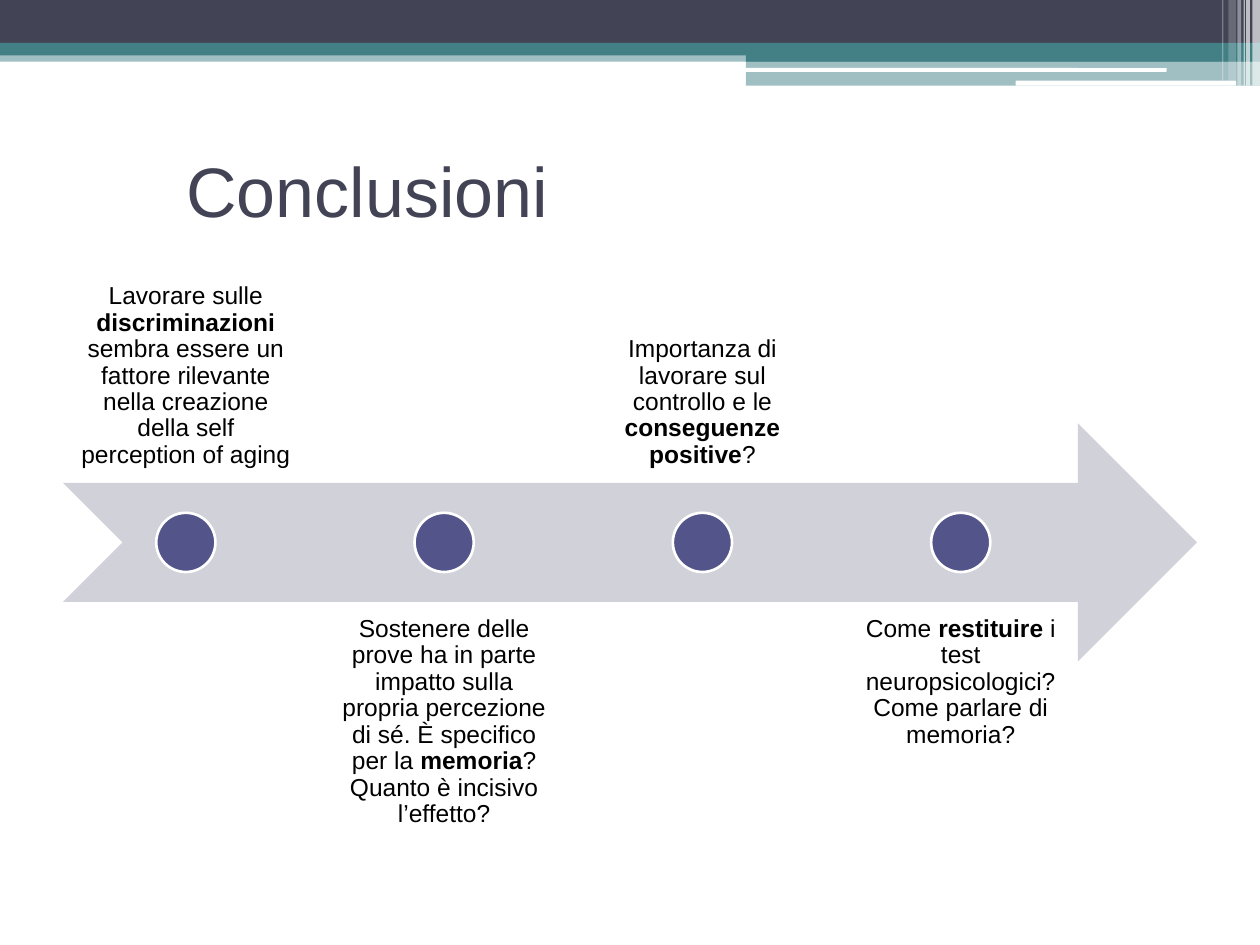
from typing import NamedTuple

from lxml.etree import SubElement
from pptx import Presentation
from pptx.dml.color import RGBColor
from pptx.enum.shapes import MSO_SHAPE
from pptx.enum.text import MSO_ANCHOR, PP_ALIGN
from pptx.oxml.ns import qn
from pptx.util import Inches, Pt

WHITE = RGBColor(0xFF, 0xFF, 0xFF)
BLACK = RGBColor(0x00, 0x00, 0x00)
NAVY = RGBColor(0x42, 0x44, 0x56)
TEAL = RGBColor(0x43, 0x80, 0x86)
ARROW_GREY = RGBColor(0xD1, 0xD1, 0xDA)
DOT_VIOLET = RGBColor(0x53, 0x54, 0x8A)
FONT = "Arial"

STEP_LEFT, STEP_PITCH = 0.5, 2.05
STEP_WIDTH, STEP_HEIGHT = 1.95, 1.89
TOP_ABOVE, TOP_BELOW = 1.94, 4.78
DOT_SIZE, DOT_TOP = 0.47, 4.07


class Bar(NamedTuple):
    left: float
    top: float
    width: float
    height: float
    color: RGBColor
    opacity: int = 100
    kind: MSO_SHAPE = MSO_SHAPE.RECTANGLE


class Step(NamedTuple):
    before: str
    bold: str
    after: str


BARS = [
    # Full-width bands
    Bar(0, 0.4, 10, 0.09, TEAL, 50),
    Bar(0, 0, 10, 0.34, NAVY),
    Bar(0, 0.34, 10, 0.1, TEAL),
    # Right-hand bands and white lines
    Bar(5.92, 0.39, 4.08, 0.1, TEAL),
    Bar(5.92, 0.48, 4.08, 0.2, TEAL, 50),
    Bar(5.91, 0.54, 3.35, 0.03, WHITE, kind=MSO_SHAPE.ROUNDED_RECTANGLE),
    Bar(8.06, 0.64, 1.75, 0.04, WHITE, kind=MSO_SHAPE.ROUNDED_RECTANGLE),
    # Corner stripes
    Bar(9.94, 0, 0.06, 0.68, WHITE, 65),
    Bar(9.89, 0, 0.03, 0.68, WHITE, 65),
    Bar(9.87, 0, 0.01, 0.68, WHITE, 60),
    Bar(9.82, 0, 0.03, 0.68, WHITE, 40),
    Bar(9.75, 0, 0.06, 0.64, WHITE, 20),
    Bar(9.7, 0, 0.01, 0.64, WHITE, 30),
]

STEPS = [
    Step("Lavorare sulle ", "discriminazioni",
         " sembra essere un fattore rilevante nella creazione della self perception of aging"),
    Step("Sostenere delle prove ha in parte impatto sulla propria percezione di sé. "
         "È specifico per la ", "memoria", "? Quanto è incisivo l’effetto?"),
    Step("Importanza di lavorare sul controllo e le ", "conseguenze positive", "?"),
    Step("Come ", "restituire", " i test neuropsicologici? Come parlare di memoria?"),
]


def add_bar(s, bar: Bar):
    sp = s.shapes.add_shape(bar.kind, Inches(bar.left), Inches(bar.top),
                            Inches(bar.width), Inches(bar.height))
    sp.shadow.inherit = False
    sp.line.fill.background()
    sp.fill.solid()
    sp.fill.fore_color.rgb = bar.color
    if bar.opacity < 100:
        clr = sp.fill._xPr.find(".//" + qn("a:srgbClr"))
        SubElement(clr, qn("a:alpha"), val=str(bar.opacity * 1000))
    return sp


def add_title(s, text: str) -> None:
    title = s.shapes.title
    title.left, title.top = Inches(1.38), Inches(0.92)
    title.width, title.height = Inches(9), Inches(1.17)
    tf = title.text_frame
    tf.text = text
    tf.vertical_anchor = MSO_ANCHOR.MIDDLE
    p = tf.paragraphs[0]
    p.alignment = PP_ALIGN.LEFT
    font = p.runs[0].font
    font.name, font.size = FONT, Pt(40)
    font.color.rgb = NAVY


def add_step(s, index: int, step: Step) -> None:
    above = index % 2 == 0
    left = STEP_LEFT + index * STEP_PITCH
    box = s.shapes.add_textbox(Inches(left), Inches(TOP_ABOVE if above else TOP_BELOW),
                               Inches(STEP_WIDTH), Inches(STEP_HEIGHT))
    tf = box.text_frame
    tf.word_wrap = True
    tf.vertical_anchor = MSO_ANCHOR.BOTTOM if above else MSO_ANCHOR.TOP
    tf.margin_left = tf.margin_right = tf.margin_top = tf.margin_bottom = Inches(0.11)
    p = tf.paragraphs[0]
    p.alignment = PP_ALIGN.CENTER
    p.line_spacing = 0.9
    for text in step:
        r = p.add_run()
        r.text = text
        r.font.name, r.font.size = FONT, Pt(14)
        r.font.bold = text == step.bold
        r.font.color.rgb = BLACK

    # Dot centred on the step
    dot = add_bar(s, Bar(left + (STEP_WIDTH - DOT_SIZE) / 2, DOT_TOP, DOT_SIZE, DOT_SIZE,
                         DOT_VIOLET, kind=MSO_SHAPE.OVAL))
    dot.line.color.rgb = WHITE
    dot.line.width = Pt(1.5)


def main() -> None:
    prs = Presentation()
    prs.slide_width, prs.slide_height = Inches(10), Inches(7.5)
    s = prs.slides.add_slide(prs.slide_layouts[5])

    # Header decoration and title
    for bar in BARS:
        add_bar(s, bar)
    add_title(s, "Conclusioni")

    # Timeline arrow with alternating steps
    add_bar(s, Bar(0.5, 3.36, 9, 1.89, ARROW_GREY, kind=MSO_SHAPE.NOTCHED_RIGHT_ARROW))
    for index, step in enumerate(STEPS):
        add_step(s, index, step)

    prs.save("out.pptx")


if __name__ == "__main__":
    main()
